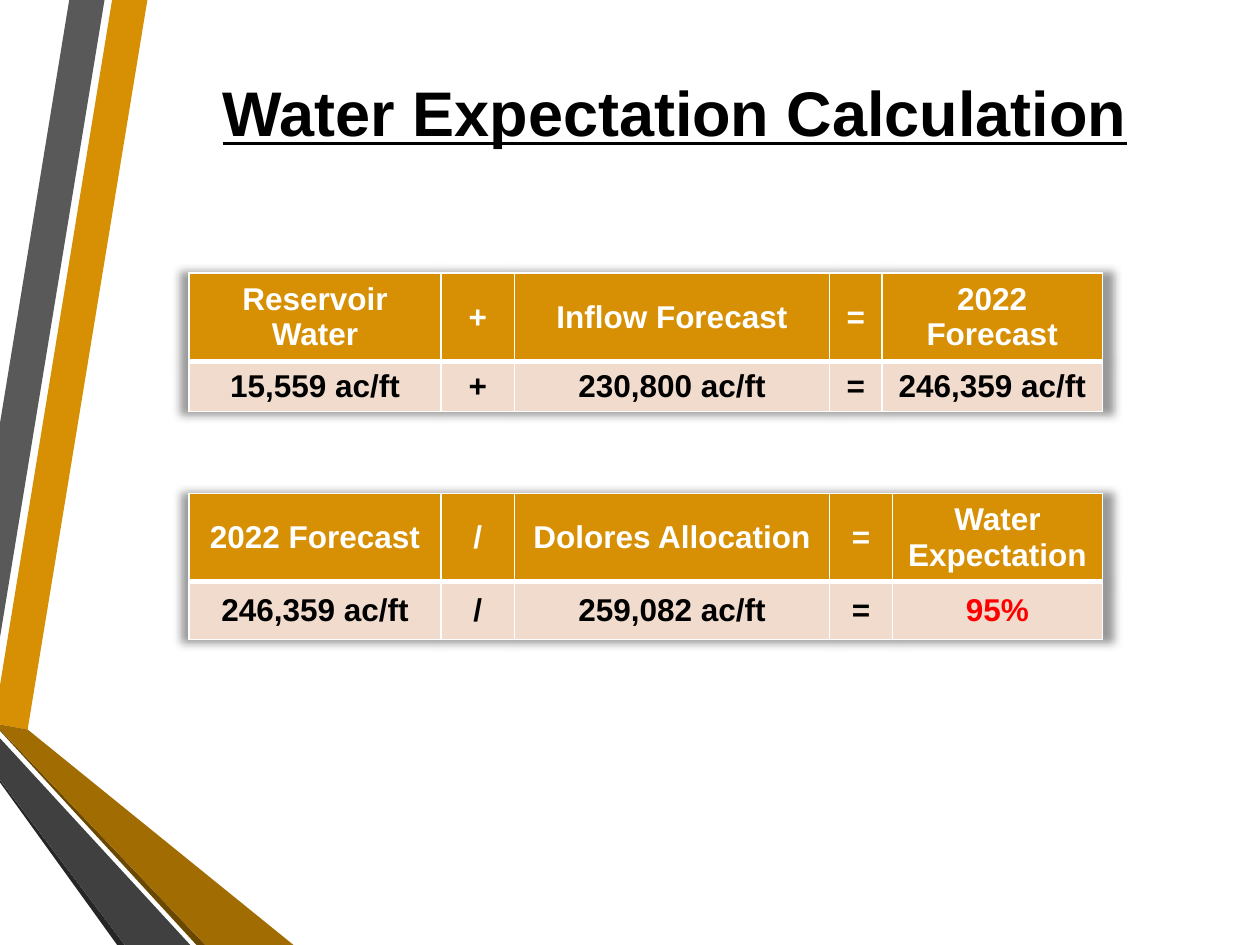
from dataclasses import dataclass

from lxml.etree import SubElement
from pptx import Presentation
from pptx.dml.color import RGBColor as Color
from pptx.enum.text import MSO_ANCHOR as Anchor, MSO_AUTO_SIZE as AutoSize, PP_ALIGN as Align
from pptx.oxml import parse_xml
from pptx.oxml.ns import nsdecls, qn
from pptx.util import Inches, Pt


@dataclass(frozen=True)
class Theme:
    font: str = "Arial"
    title_size: int = 36
    cell_size: int = 18
    gold: str = "D79003"
    dark_gold: str = "A16C02"
    deep_gold: str = "6B4802"
    gray: str = "595959"
    dark_gray: str = "404040"
    deep_gray: str = "262626"
    tint: str = "F0DBCC"
    white: str = "FFFFFF"
    black: str = "000000"
    red: str = "FF0000"


def set_font(paragraph, size, color):
    font = paragraph.font
    font.name, font.size, font.bold = theme.font, Pt(size), True
    font.color.rgb = Color.from_string(color)


def set_border(cell, side, width):
    line = SubElement(cell._tc.get_or_add_tcPr(), qn(f"a:ln{side}"), w=str(Pt(width)))
    SubElement(SubElement(line, qn("a:solidFill")), qn("a:srgbClr"), val=theme.white)


theme = Theme()
presentation = Presentation()
presentation.slide_width, presentation.slide_height = Inches(10), Inches(7.5)
unit = presentation.slide_width // 120
slide = presentation.slides.add_slide(presentation.slide_layouts[5])

bands = [
    (theme.gold, [(0, 5.44), (0, 5.75), (0.22, 5.79), (1.17, 0), (0.89, 0)]),
    (theme.gray, [(0.83, 0), (0.55, 0), (0, 3.36), (0, 5.06)]),
    (theme.deep_gray, [(0, 6.19), (0, 6.21), (0.93, 7.5), (0.99, 7.5)]),
    (theme.deep_gold, [(0, 5.79), (0, 5.8), (1.56, 7.5), (1.63, 7.5)]),
    (theme.dark_gold, [(0, 5.79), (1.63, 7.5), (2.33, 7.5), (0.22, 5.79), (0, 5.75)]),
    (theme.dark_gray, [(0, 6.19), (0.99, 7.5), (1.51, 7.5), (0, 5.86)]),
]
for color, points in bands:
    corners = [(Inches(x), Inches(y)) for x, y in points]
    builder = slide.shapes.build_freeform(*corners[0])
    builder.add_line_segments(corners[1:], close=True)
    band = builder.convert_to_shape()
    band.shadow.inherit = False
    band.fill.solid()
    band.fill.fore_color.rgb = Color.from_string(color)
    band.line.fill.background()

equations = [
    (47, (24, 7, 30, 6, 20), (8, 5.5), [
        ("2022 Forecast", "/", "Dolores Allocation", "=", "Water Expectation"),
        ("246,359 ac/ft", "/", "259,082 ac/ft", "=", "95%"),
    ]),
    (26, (24, 7, 30, 5, 21), (8, 4.5), [
        ("Reservoir Water", "+", "Inflow Forecast", "=", "2022 Forecast"),
        ("15,559 ac/ft", "+", "230,800 ac/ft", "=", "246,359 ac/ft"),
    ]),
]
for top, columns, rows, texts in equations:
    table = slide.shapes.add_table(
        len(rows), len(columns), 18 * unit, top * unit,
        sum(columns) * unit, int(sum(rows) * unit),
    ).table
    table._tbl.tblPr.insert(0, parse_xml(
        f'<a:effectLst {nsdecls("a")}>'
        '<a:outerShdw blurRad="63500" sx="102000" sy="102000" algn="ctr" rotWithShape="0">'
        '<a:prstClr val="black"><a:alpha val="40000"/></a:prstClr>'
        '</a:outerShdw></a:effectLst>'
    ))
    for column, width in zip(table.columns, columns):
        column.width = width * unit
    for row_index, (row, height) in enumerate(zip(table.rows, rows)):
        row.height = int(height * unit)
        header = row_index == 0
        for cell, text in zip(row.cells, texts[row_index]):
            cell.text = text
            cell.vertical_anchor = Anchor.MIDDLE
            paragraph = cell.text_frame.paragraphs[0]
            paragraph.alignment = Align.CENTER
            text_color = theme.white if header else theme.red if text == "95%" else theme.black
            set_font(paragraph, theme.cell_size, text_color)
            for side in "LRTB":
                divider = side == ("B" if header else "T")
                set_border(cell, side, 3 if divider else 1)
            cell.fill.solid()
            cell.fill.fore_color.rgb = Color.from_string(theme.gold if header else theme.tint)

title = slide.shapes.title
title.left, title.top = 20 * unit, int(6.4 * unit)
title.width, title.height = int(89.4 * unit), int(8.5 * unit)
frame = title.text_frame
frame.text = "Water Expectation Calculation"
frame.word_wrap = False
frame.auto_size = AutoSize.SHAPE_TO_FIT_TEXT
frame.vertical_anchor = Anchor.TOP
paragraph = frame.paragraphs[0]
paragraph.alignment = Align.LEFT
set_font(paragraph, theme.title_size, theme.black)
paragraph.font.underline = True

presentation.save("out.pptx")
